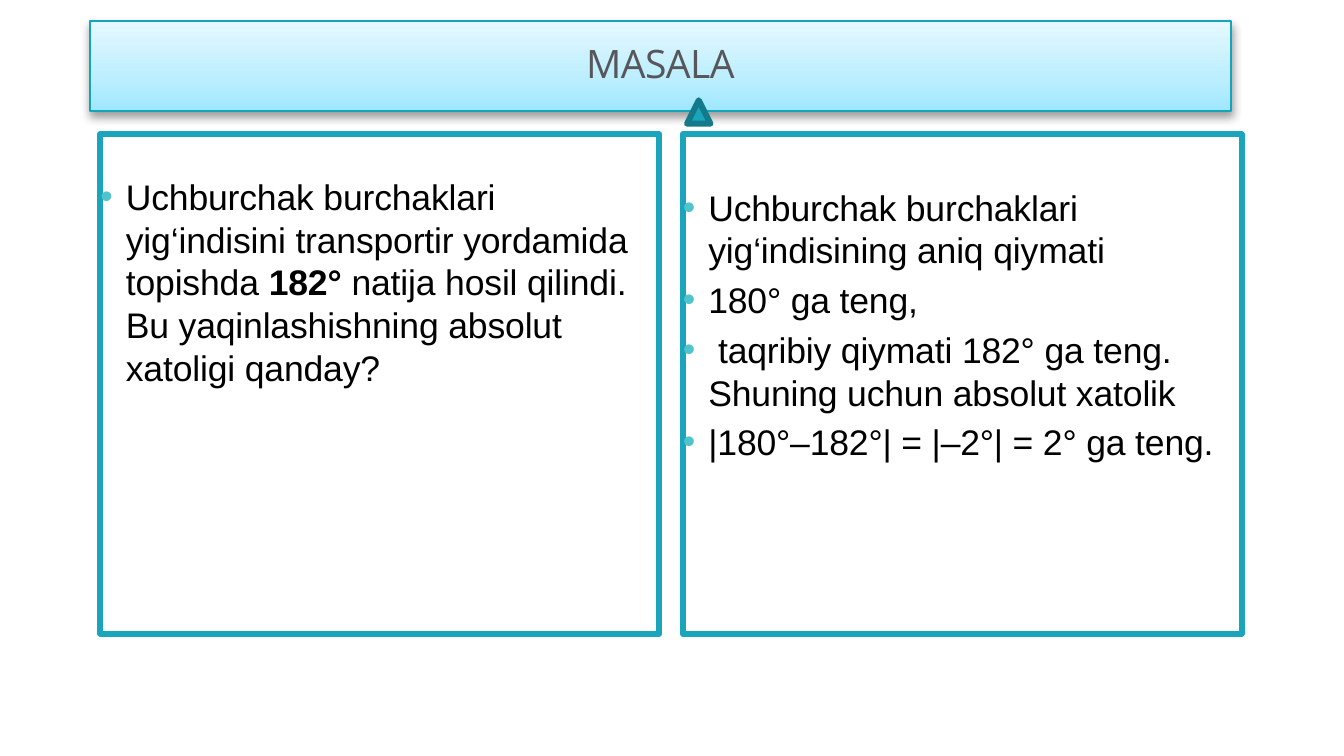
import pptx
import pptx.dml.color
import pptx.enum.shapes
import pptx.enum.text
import pptx.oxml
import pptx.oxml.ns
import pptx.util

WIDTH, HEIGHT = pptx.util.Cm(16), pptx.util.Cm(9)
COLORS = {"text": "000000", "title": "57565A", "title_line": "15A4BD", "teal": "1AA5BD",
          "dark_teal": "137A8C", "bullet": "51C3CA", "white": "FFFFFF", "shadow": "000000"}
TITLE_STOPS = ((0, "9FE7FF"), (35, "BBEEFF"), (100, "E5F8FF"))
TITLE_FONT = {"name": "Open Sans", "size": pptx.util.Pt(13.2), "bold": False}
BODY_FONT = {"name": "Arial", "size": pptx.util.Pt(12), "bold": False}
INDENT = 0.12

PROBLEM = [[("Uchburchak burchaklari yig‘indisini transportir yordamida topishda ", False),
            ("182° ", True),
            ("natija hosil qilindi. Bu yaqinlashishning absolut xatoligi qanday?", False)]]
SOLUTION = [[(line, False)] for line in (
    "Uchburchak burchaklari yig‘indisining aniq qiymati",
    "180° ga teng,",
    " taqribiy qiymati 182° ga teng. Shuning uchun absolut xatolik",
    "|180°–182°| = |–2°| = 2° ga teng.")]


def rgb(name):
    """Return the named colour."""
    return pptx.dml.color.RGBColor.from_string(COLORS[name])


def xml(body):
    """Return a drawing element made from its markup."""
    tag, rest = body.split(" ", 1)
    return pptx.oxml.parse_xml(f"<a:{tag} {pptx.oxml.ns.nsdecls('a')} {rest}")


def set_values(target, values):
    """Set each attribute of the target from a dict."""
    for name, value in values.items():
        setattr(target, name, value)


def add_outlined(page, kind, box, fill, line, weight):
    """Add a filled preset shape with a rounded outline and no shadow."""
    shape = page.shapes.add_shape(kind, *map(pptx.util.Inches, box))
    shape.shadow.inherit = False
    shape.fill.solid()
    shape.fill.fore_color.rgb = rgb(fill)
    shape.line.color.rgb = rgb(line)
    shape.line.width = pptx.util.Pt(weight)
    shape.line._get_or_add_ln().append(xml("round />"))
    return shape


def set_frame(shape, anchor, top=0):
    """Wrap the text of a shape and set its insets."""
    frame = shape.text_frame
    set_values(frame, {"word_wrap": True, "vertical_anchor": anchor, "margin_left": 0,
                       "margin_right": 0, "margin_bottom": 0,
                       "margin_top": pptx.util.Inches(top)})
    return frame


def add_span(para, text, font, color, spacing):
    """Add a run with its font, colour and letter spacing in points."""
    span = para.add_run()
    span.text = text
    set_values(span.font, font)
    span.font.color.rgb = rgb(color)
    span.font._element.set("spc", str(round(spacing * 100)))


def add_title(page, box, text):
    """Draw the gradient banner with its centred title."""
    banner = add_outlined(page, pptx.enum.shapes.MSO_SHAPE.RECTANGLE, box,
                          "white", "title_line", 0.75)
    stops = "".join(f'<a:gs pos="{share * 1000}"><a:srgbClr val="{color}"/></a:gs>'
                    for share, color in TITLE_STOPS)
    gradient = xml(f'gradFill rotWithShape="1"><a:gsLst>{stops}</a:gsLst>'
                   '<a:lin ang="16200000" scaled="0"/></a:gradFill>')
    properties = banner._element.spPr
    properties.replace(properties.find(pptx.oxml.ns.qn("a:solidFill")), gradient)
    effects = properties.find(pptx.oxml.ns.qn("a:effectLst"))
    effects.append(xml(
        f'outerShdw blurRad="{pptx.util.Pt(3.1)}" dist="{pptx.util.Pt(1.6)}" dir="5400000" '
        f'rotWithShape="0"><a:srgbClr val="{COLORS["shadow"]}"><a:alpha val="38000"/>'
        '</a:srgbClr></a:outerShdw>'))
    para = set_frame(banner, pptx.enum.text.MSO_ANCHOR.MIDDLE).paragraphs[0]
    set_values(para, {"alignment": pptx.enum.text.PP_ALIGN.CENTER, "line_spacing": 0.86})
    add_span(para, text, TITLE_FONT, "title", -0.2)


def add_panel(page, box, top, paragraphs):
    """Draw an outlined panel with bulleted paragraphs."""
    panel = add_outlined(page, pptx.enum.shapes.MSO_SHAPE.RECTANGLE, box, "white", "teal", 2)
    frame = set_frame(panel, pptx.enum.text.MSO_ANCHOR.TOP, top)
    for index, spans in enumerate(paragraphs):
        para = frame.add_paragraph() if index else frame.paragraphs[0]
        set_values(para, {"alignment": pptx.enum.text.PP_ALIGN.LEFT, "line_spacing": 1.0,
                          "space_before": pptx.util.Pt(2.4 if index else 0)})
        properties = para._p.get_or_add_pPr()
        properties.set("marL", str(pptx.util.Inches(INDENT)))
        properties.set("indent", str(-pptx.util.Inches(INDENT)))
        properties.append(xml(f'buClr ><a:srgbClr val="{COLORS["bullet"]}"/></a:buClr>'))
        properties.append(xml('buFont typeface="Arial"/>'))
        properties.append(xml('buChar char="•"/>'))
        for text, bold in spans:
            add_span(para, text, {**BODY_FONT, "bold": bold}, "text", -0.05)


def add_columns(page, box, gap):
    """Place the problem and the solution side by side in the box."""
    left, top, width, height = box
    column = (width - gap) / 2
    for index, (inset, paragraphs) in enumerate(((0.19, PROBLEM), (0.24, SOLUTION))):
        add_panel(page, (left + index * (column + gap), top, column, height), inset, paragraphs)


def main():
    """Build and save the slide."""
    deck = pptx.Presentation()
    set_values(deck, {"slide_width": WIDTH, "slide_height": HEIGHT})
    page = deck.slides.add_slide(deck.slide_layouts[6])
    add_title(page, (0.42, 0.1, 5.35, 0.42), "MASALA")
    add_columns(page, (0.47, 0.63, 5.35, 2.34), 0.11)
    add_outlined(page, pptx.enum.shapes.MSO_SHAPE.ISOSCELES_TRIANGLE,
                 (3.22, 0.47, 0.11, 0.11), "teal", "dark_teal", 2)
    deck.save("out.pptx")


if __name__ == "__main__":
    main()
